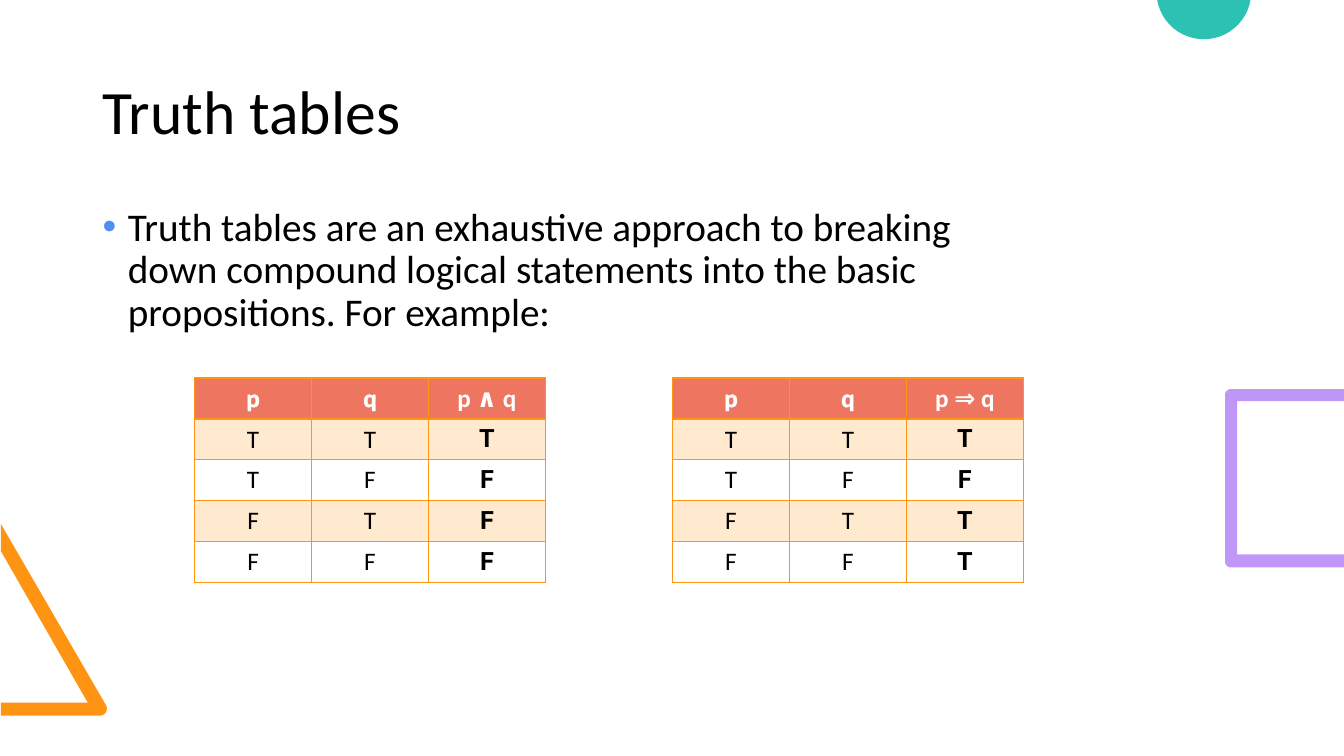
import math
from dataclasses import dataclass
from itertools import product

from lxml import etree
from pptx import Presentation
from pptx.dml.color import RGBColor
from pptx.enum import text
from pptx.oxml import ns
from pptx.util import Inches, Pt


@dataclass(frozen=True)
class Theme:
    orange: str = "FF9413"
    teal: str = "2BC2B4"
    purple: str = "C097F8"
    coral: str = "EE7660"
    blue: str = "4D90EF"
    black: str = "000000"
    white: str = "FFFFFF"
    font: str = "Calibri"
    result_font: str = "Roboto"
    title_size: int = 44
    body_size: int = 28
    table_size: int = 18


theme = Theme()


def add_span(para, words, size, color=theme.black, font=theme.font, bold=False):
    span = para.add_run()
    span.text = words
    span.font.size = Pt(size)
    span.font.name = font
    span.font.bold = bold
    span.font.color.rgb = RGBColor.from_string(color)
    return span


def arc(center_x, center_y, radius, start, end, steps=24):
    """Points along a circle, in inches; angles in degrees, clockwise."""
    angles = [math.radians(start + (end - start) * i / steps) for i in range(steps + 1)]
    return [(center_x + radius * math.cos(a), center_y + radius * math.sin(a)) for a in angles]


deck = Presentation()
deck.slide_width, deck.slide_height = Inches(13.33), Inches(7.5)
page = deck.slides.add_slide(deck.slide_layouts[6])

# Decorations cut off by the slide edges
triangle = [(0.01, 7.1), (0.01, 6.97), (0.87, 6.97), (0.01, 5.47), (0.01, 5.2),
            *arc(0.99, 7.03, 0.07, -30, 90)]
circle = arc(11.94, -0.08, 0.47, 10, 170)
frame = [(13.33, 5.63), (13.33, 5.5), (12.27, 5.5), (12.27, 3.98), (13.33, 3.98), (13.33, 3.86),
         *arc(12.21, 3.92, 0.06, 270, 180), *arc(12.21, 5.57, 0.06, 180, 90)]
for outline, color in ((triangle, theme.orange), (circle, theme.teal), (frame, theme.purple)):
    points = [(Inches(x), Inches(y)) for x, y in outline]
    builder = page.shapes.build_freeform(*points[0])
    builder.add_line_segments(points[1:], close=True)
    shape = builder.convert_to_shape()
    shape.shadow.inherit = False
    shape.fill.solid()
    shape.fill.fore_color.rgb = RGBColor.from_string(color)
    shape.line.fill.background()

# Title and body
title = page.shapes.add_textbox(Inches(0.92), Inches(0.33), Inches(11.5), Inches(1.61))
title.text_frame.word_wrap = True
title.text_frame.vertical_anchor = text.MSO_ANCHOR.MIDDLE
para = title.text_frame.paragraphs[0]
para.line_spacing = 0.9
add_span(para, "Truth tables", theme.title_size)

body = page.shapes.add_textbox(Inches(0.92), Inches(2.01), Inches(8.76), Inches(1.47))
body.text_frame.word_wrap = True
para = body.text_frame.paragraphs[0]
para.line_spacing = 0.9
para.space_before, para.space_after = Pt(10), Pt(8)
add_span(para, "Truth tables are an exhaustive approach to breaking down compound logical "
               "statements into the basic propositions. For example:", theme.body_size)
props = para._p.get_or_add_pPr()
props.set("marL", str(Inches(0.25)))
props.set("indent", str(-Inches(0.25)))
bullet_color = etree.SubElement(props, ns.qn("a:buClr"))
etree.SubElement(bullet_color, ns.qn("a:srgbClr"), val=theme.blue)
etree.SubElement(props, ns.qn("a:buFont"), typeface="Arial")
etree.SubElement(props, ns.qn("a:buChar"), char="•")

# Truth tables
statements = (
    (1.93, "p ∧ q", lambda p, q: p and q),
    (6.67, "p ⇒ q", lambda p, q: not p or q),
)
for left, statement, evaluate in statements:
    rows = [("p", "q", statement)]
    for p, q in product((True, False), repeat=2):
        rows.append(tuple("T" if value else "F" for value in (p, q, evaluate(p, q))))
    table = page.shapes.add_table(len(rows), 3, Inches(left), Inches(3.75),
                                  Inches(3.48), Inches(2.03)).table
    table.horz_banding = False
    for row in table.rows:
        row.height = Inches(2.03 / len(rows))

    for (r, row), c in product(enumerate(rows), range(3)):
        header, result = r == 0, c == 2
        cell = table.cell(r, c)
        cell.vertical_anchor = text.MSO_ANCHOR.MIDDLE
        para = cell.text_frame.paragraphs[0]
        para.alignment = text.PP_ALIGN.CENTER
        span = add_span(para, row[c], theme.table_size,
                        color=theme.white if header else theme.black,
                        font=theme.result_font if result and not header else theme.font,
                        bold=header or result)
        if header and not result:
            edge = etree.Element(ns.qn("a:ln"), w=str(Pt(0.75)))
            edge_fill = etree.SubElement(edge, ns.qn("a:solidFill"))
            etree.SubElement(edge_fill, ns.qn("a:srgbClr"), val=theme.white)
            span.font._element.insert(0, edge)

        cell_props = cell._tc.get_or_add_tcPr()
        if header or r % 2:
            cell.fill.solid()
            cell.fill.fore_color.rgb = RGBColor.from_string(theme.coral if header else theme.orange)
            if not header:
                tint = cell_props.find(".//" + ns.qn("a:srgbClr"))
                etree.SubElement(tint, ns.qn("a:alpha"), val="20000")
        else:
            cell.fill.background()
        for position, side in enumerate("LRTB"):
            thick = (r, side) in ((0, "B"), (1, "T"))
            border = etree.Element(ns.qn("a:ln" + side), w=str(Pt(2 if thick else 1)))
            border_fill = etree.SubElement(border, ns.qn("a:solidFill"))
            etree.SubElement(border_fill, ns.qn("a:srgbClr"), val=theme.orange)
            cell_props.insert(position, border)

deck.save("out.pptx")
